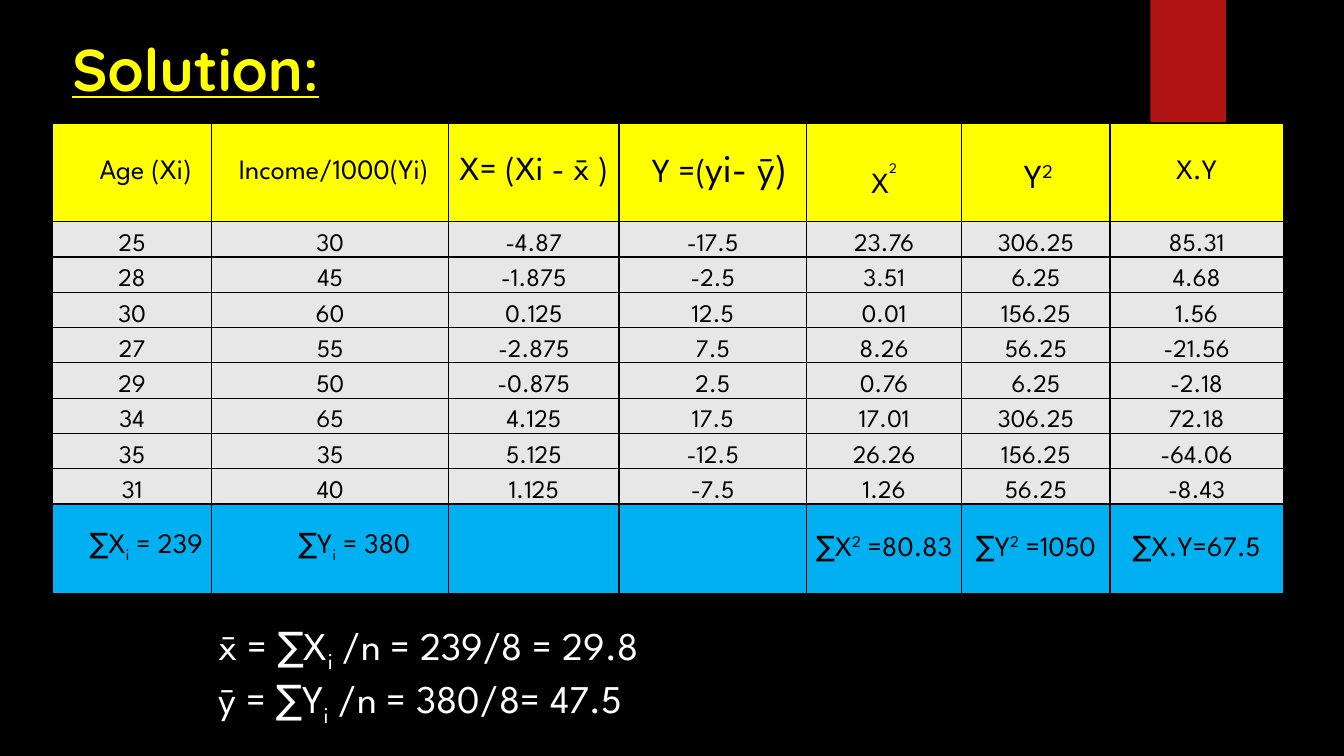
import pptx
import pptx.util
import pptx.dml.color
import pptx.enum.shapes
import pptx.enum.text
import pptx.oxml
import pptx.oxml.ns
from dataclasses import dataclass

Inches, Pt = pptx.util.Inches, pptx.util.Pt
ANCHOR = pptx.enum.text.MSO_ANCHOR
ALIGN = pptx.enum.text.PP_ALIGN


@dataclass(frozen=True)
class Theme:
    background: str = "000000"
    accent: str = "B01513"
    title: str = "FFFF00"
    header: str = "FFFF00"
    body: str = "E7E7E7"
    total: str = "00B0F0"
    dark: str = "000000"
    light: str = "FFFFFF"
    title_font: str = "Quicksand"
    text_font: str = "League Spartan"
    title_size: int = 42
    header_size: int = 20
    body_size: int = 18
    formula_size: int = 28


THEME = Theme()
SUB, SUP = -25, 30

# Each run is (text, baseline percent, size or None for the paragraph's size);
# each heading and total is (extra left margin, line spacing, runs)
HEADER = [
    (0.27, 1, [("Age (Xi)", 0, None)]),
    (0.07, 1, [("Income/1000(Yi)", 0, None)]),
    (0, 1, [("X= (Xi - x̄ )", 0, 24)]),
    (0.13, 1, [("Y =(", 0, 24), ("yi- ȳ)", 0, 28)]),
    (0, 1, [("X", SUB, 36), ("2", SUP, 18)]),
    (0.05, 1.5, [("Y", 0, 24), ("2", SUP, 24)]),
    (0, 1, [("X.Y", 0, None)]),
]
ROWS = [
    ["25", "30", "-4.87", "-17.5", "23.76", "306.25", "85.31"],
    ["28", "45", "-1.875", "-2.5", "3.51", "6.25", "4.68"],
    ["30", "60", "0.125", "12.5", "0.01", "156.25", "1.56"],
    ["27", "55", "-2.875", "7.5", "8.26", "56.25", "-21.56"],
    ["29", "50", "-0.875", "2.5", "0.76", "6.25", "-2.18"],
    ["34", "65", "4.125", "17.5", "17.01", "306.25", "72.18"],
    ["35", "35", "5.125", "-12.5", "26.26", "156.25", "-64.06"],
    ["31", "40", "1.125", "-7.5", "1.26", "56.25", "-8.43"],
]
TOTALS = [
    (0.28, 1, [("∑X", 0, None), ("i", SUB, None), (" = 239", 0, None)]),
    (0.48, 1, [("∑Y", 0, None), ("i", SUB, None), (" = 380", 0, None)]),
    (0, 1, []),
    (0, 1, []),
    (0, 1, [("∑X", 0, None), ("2", SUP, None), (" =80.83", 0, None)]),
    (0, 1, [("∑Y", 0, None), ("2", SUP, None), (" =1050", 0, None)]),
    (0, 1, [("∑X.Y=67.5", 0, None)]),
]
MEANS = [
    [("x̄ = ∑X", 0, None), ("i", SUB, None), (" /n = 239/8 = 29.8", 0, None)],
    [("ȳ = ∑Y", 0, None), ("i", SUB, None), (" /n = 380/8= 47.5", 0, None)],
]
COLUMNS = [1.58, 2.35, 1.69, 1.86, 1.54, 1.47, 1.72]
HEADER_HEIGHT, BODY_HEIGHT, TOTAL_HEIGHT = 0.98, 0.35, 0.89


def rgb(value):
    return pptx.dml.color.RGBColor.from_string(value)


def write(p, runs, font, size, color):
    p.font.name, p.font.size = font, Pt(size)
    p.font.color.rgb = rgb(color)
    for text, baseline, run_size in runs:
        r = p.add_run()
        r.text = text
        if run_size:
            r.font.size = Pt(run_size)
        if baseline:
            r._r.get_or_add_rPr().set("baseline", str(baseline * 1000))


def add_text_box(s, box):
    tf = s.shapes.add_textbox(*map(Inches, box)).text_frame
    tf.word_wrap = True
    return tf


def add_ribbon(s, box):
    sp = s.shapes.add_shape(pptx.enum.shapes.MSO_SHAPE.RECTANGLE, *map(Inches, box))
    sp.shadow.inherit = False
    sp.fill.solid()
    sp.fill.fore_color.rgb = rgb(THEME.accent)
    sp.line.fill.background()


def add_title(s, box):
    tf = add_text_box(s, box)
    tf.vertical_anchor = ANCHOR.BOTTOM
    p = tf.paragraphs[0]
    p.font.bold = p.font.underline = True
    write(p, [("Solution:", 0, None)], THEME.title_font, THEME.title_size, THEME.title)


def add_borders(cell):
    props = cell._tc.get_or_add_tcPr()
    for i, side in enumerate(("lnL", "lnR", "lnT", "lnB")):
        props.insert(i, pptx.oxml.parse_xml(
            f'<a:{side} {pptx.oxml.ns.nsdecls("a")} w="{Pt(1)}"><a:solidFill>'
            f'<a:srgbClr val="{THEME.dark}"/></a:solidFill></a:{side}>'))


def fill_cell(cell, content, size, fill, anchor):
    indent, spacing, runs = content
    cell.margin_left = Inches(0.01 + indent)
    cell.margin_right = cell.margin_top = Inches(0.01)
    cell.margin_bottom = 0
    cell.vertical_anchor = anchor
    cell.fill.solid()
    cell.fill.fore_color.rgb = rgb(fill)
    add_borders(cell)
    p = cell.text_frame.paragraphs[0]
    p.alignment = ALIGN.CENTER
    if spacing != 1:
        p.line_spacing = spacing
    write(p, runs, THEME.text_font, size, THEME.dark)


def add_data_table(s, left, top):
    heights = [HEADER_HEIGHT] + [BODY_HEIGHT] * len(ROWS) + [TOTAL_HEIGHT]
    box = map(Inches, (left, top, sum(COLUMNS), sum(heights)))
    table = s.shapes.add_table(len(heights), len(COLUMNS), *box).table
    for column, width in zip(table.columns, COLUMNS):
        column.width = Inches(width)
    for row, height in zip(table.rows, heights):
        row.height = Inches(height)

    body = [[(0, 1, [(value, 0, None)]) for value in row] for row in ROWS]
    header_style = (THEME.header_size, THEME.header, ANCHOR.MIDDLE)
    body_style = (THEME.body_size, THEME.body, ANCHOR.BOTTOM)
    total_style = (THEME.header_size, THEME.total, ANCHOR.MIDDLE)
    styles = [header_style] + [body_style] * len(ROWS) + [total_style]
    for i, (row, style) in enumerate(zip([HEADER, *body, TOTALS], styles)):
        for j, content in enumerate(row):
            fill_cell(table.cell(i, j), content, *style)


def add_means(s, box):
    tf = add_text_box(s, box)
    for i, runs in enumerate(MEANS):
        p = tf.add_paragraph() if i else tf.paragraphs[0]
        write(p, runs, THEME.text_font, THEME.formula_size, THEME.light)


def solution_slide(prs):
    s = prs.slides.add_slide(prs.slide_layouts[6])
    s.background.fill.solid()
    s.background.fill.fore_color.rgb = rgb(THEME.background)
    add_ribbon(s, (11.41, 0, 0.75, 1.21))
    add_title(s, (0.62, 0.32, 2.75, 0.75))
    add_data_table(s, 0.52, 1.22)
    add_means(s, (2.07, 6.11, 7.18, 1.04))


def main():
    prs = pptx.Presentation()
    prs.slide_width, prs.slide_height = Inches(13.33), Inches(7.5)
    solution_slide(prs)
    prs.save("out.pptx")


if __name__ == "__main__":
    main()
